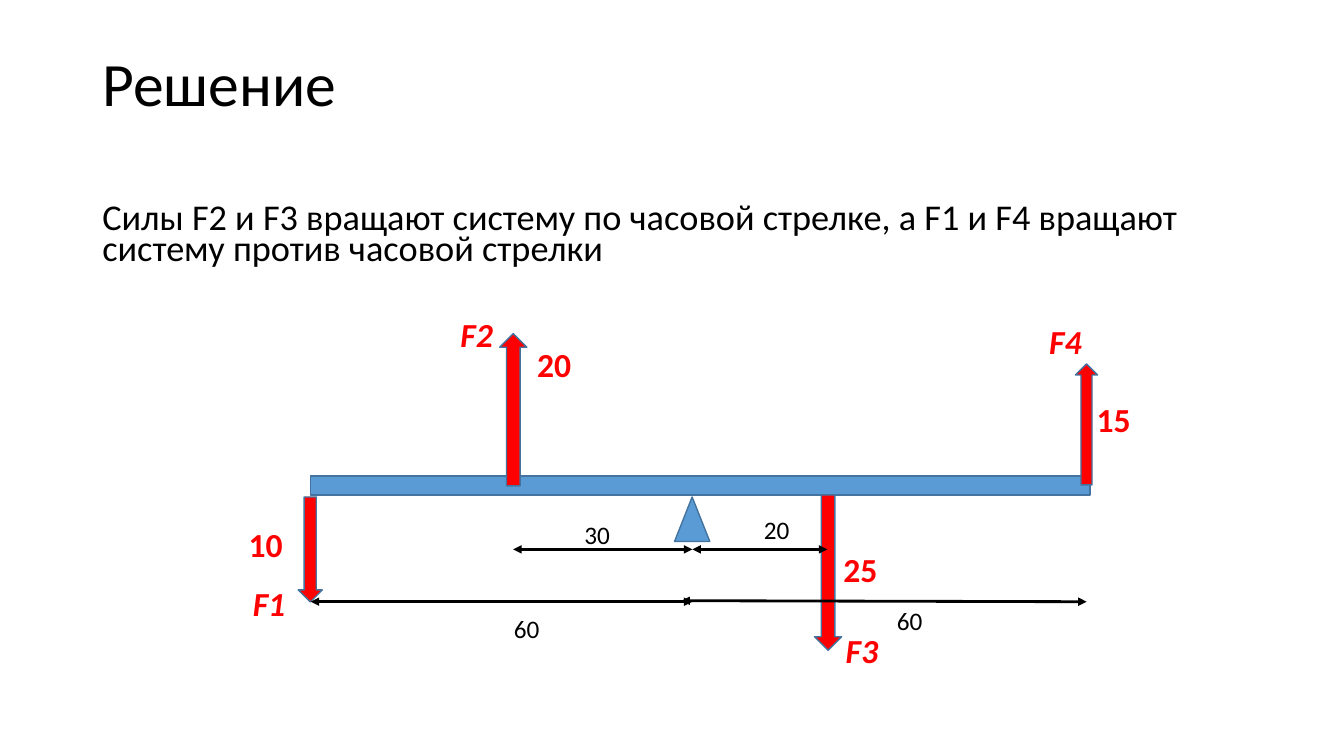
from lxml import etree
from pptx import Presentation
from pptx.dml.color import RGBColor
from pptx.enum.shapes import MSO_CONNECTOR as CONN, MSO_SHAPE as SHAPE
from pptx.enum.text import MSO_ANCHOR as ANCHOR
from pptx.oxml.ns import qn
from pptx.util import Pt

COLORS = {"text": "000000", "force": "FF0000", "beam": "5B9BD5", "edge": "43739E"}

prs = Presentation()
prs.slide_width, prs.slide_height = Pt(960), Pt(540)
s = prs.slides.add_slide(prs.slide_layouts[6])


def add_text(text, x, y, w, h, size, color="text", bold=False, italic=False, wrap=False):
    tf = s.shapes.add_textbox(Pt(x), Pt(y), Pt(w), Pt(h)).text_frame
    tf.word_wrap = wrap
    p = tf.paragraphs[0]
    r = p.add_run()
    r.text = text
    r.font.name, r.font.size = "Calibri", Pt(size)
    r.font.bold, r.font.italic = bold, italic
    r.font.color.rgb = RGBColor.from_string(COLORS[color])
    return tf, p


def add_solid(kind, x, y, w, h, fill):
    sp = s.shapes.add_shape(kind, Pt(x), Pt(y), Pt(w), Pt(h))
    sp.shadow.inherit = False
    sp.fill.solid()
    sp.fill.fore_color.rgb = RGBColor.from_string(COLORS[fill])
    sp.line.color.rgb = RGBColor.from_string(COLORS["edge"])
    sp.line.width = Pt(1)


# Title and statement
tf, p = add_text("Решение", 66, 28.8, 828, 65.5, 44, wrap=True)
tf.vertical_anchor = ANCHOR.MIDDLE
p.line_spacing = 0.9
tf, p = add_text("Силы F2 и F3 вращают систему по часовой стрелке, "
                 "а F1 и F4 вращают систему против часовой стрелки",
                 66, 144, 828, 57, 25.9, wrap=True)
p.line_spacing = 0.7
p.space_before = Pt(10)

# Beam and pivot
add_solid(SHAPE.RECTANGLE, 222, 340, 556.5, 13.7, "beam")
add_solid(SHAPE.ISOSCELES_TRIANGLE, 481.8, 355, 25.2, 31.8, "beam")

# Forces: arrow, name and its place, value and its place
DOWN, UP = SHAPE.DOWN_ARROW, SHAPE.UP_ARROW
forces = [
    (DOWN, (213, 355, 17.3, 75), "F1", (173.5, 412.6), "10", (170.6, 370.8)),
    (DOWN, (581.8, 353.5, 19.4, 111), "F3", (597, 446.4), "25", (595.4, 388.8)),
    (UP, (357, 238.3, 19.4, 108.7), "F2", (321.8, 221), "20", (376.6, 242)),
    (UP, (768.2, 260, 15.8, 86.4), "F4", (742.3, 225.4), "15", (776.2, 281.5)),
]
for kind, box, name, name_at, value, value_at in forces:
    add_solid(kind, *box, "force")
    add_text(name, *name_at, 38, 36, 24, "force", bold=True, italic=True)
    add_text(value, *value_at, 38.9, 36, 24, "force", bold=True)

# Lever arms: start, end, length and its place
arms = [
    ((366.5, 392.4), (494.6, 392.4), "30", (410.4, 367.2)),
    ((222, 429.8), (494.6, 429.8), "60", (360, 434.2)),
    ((494.6, 392.4), (591, 392.4), "20", (538.6, 363.6)),
    ((486.7, 429.1), (776.2, 429.8), "60", (633.6, 429.1)),
]
for (x1, y1), (x2, y2), length, length_at in arms:
    arm = s.shapes.add_connector(CONN.STRAIGHT, Pt(x1), Pt(y1), Pt(x2), Pt(y2))
    arm.line.color.rgb = RGBColor.from_string(COLORS["text"])
    arm.line.width = Pt(2)
    for end in ("a:headEnd", "a:tailEnd"):
        etree.SubElement(arm.line._get_or_add_ln(), qn(end), type="triangle")
    etree.SubElement(arm._element.spPr, qn("a:effectLst"))
    add_text(length, *length_at, 33, 28.8, 18)

prs.save("out.pptx")
